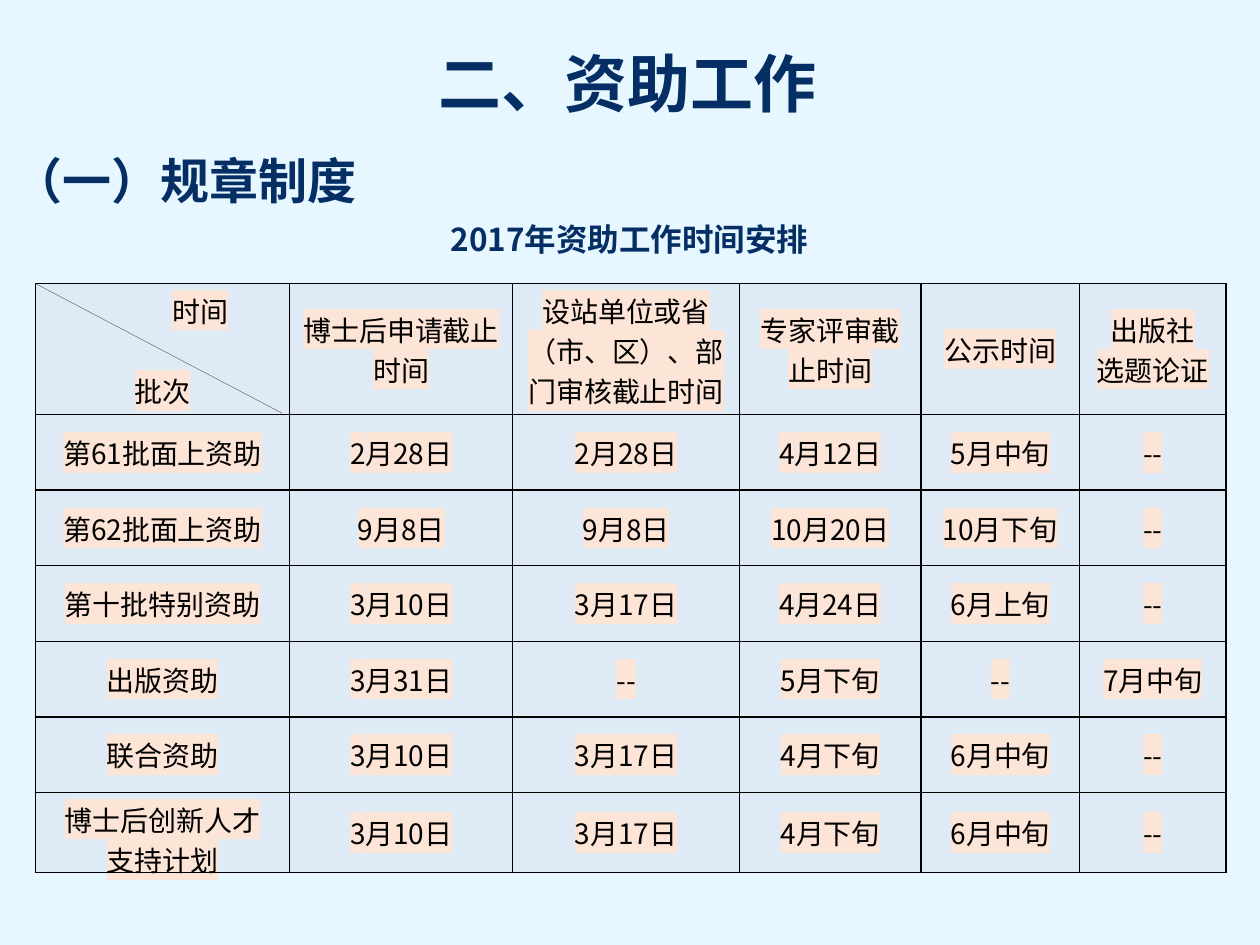
"""Build the slide with the 2017 funding schedule."""
from dataclasses import dataclass

import pptx
import pptx.dml.color
import pptx.enum.shapes
import pptx.enum.text
import pptx.oxml
import pptx.oxml.ns
import pptx.util
from pptx.util import Inches

FONT = "Noto Sans CJK SC"
NAVY, BLACK, GRAY = "052E65", "000000", "5F5F5F"
SKY, CELL_BLUE, PEACH = "E6F7FF", "DEEBF7", "FCE4D6"
CENTER = pptx.enum.text.PP_ALIGN.CENTER
LEFT = pptx.enum.text.PP_ALIGN.LEFT
NONE = "--"

COLUMN_WIDTHS = [2.02, 1.77, 1.8, 1.44, 1.26, 1.16]
ROW_HEIGHTS = [1.04] + [0.6] * 6
SCHEDULE = [
    ["时间\n批次", "博士后申请截止时间", "设站单位或省（市、区）、部门审核截止时间",
     "专家评审截止时间", "公示时间", "出版社\n选题论证"],
    ["第61批面上资助", "2月28日", "2月28日", "4月12日", "5月中旬", NONE],
    ["第62批面上资助", "9月8日", "9月8日", "10月20日", "10月下旬", NONE],
    ["第十批特别资助", "3月10日", "3月17日", "4月24日", "6月上旬", NONE],
    ["出版资助", "3月31日", NONE, "5月下旬", NONE, "7月中旬"],
    ["联合资助", "3月10日", "3月17日", "4月下旬", "6月中旬", NONE],
    ["博士后创新人才\n支持计划", "3月10日", "3月17日", "4月下旬", "6月中旬", NONE],
]


@dataclass(frozen=True)
class Heading:
    """A line of heading text with its place and size."""
    text: str
    left: float
    top: float
    width: float
    height: float
    size: int
    align: pptx.enum.text.PP_ALIGN = CENTER
    space_before: int = 4


HEADINGS = [
    Heading("二、资助工作", 0.16, 0.37, 9.64, 0.7, 36, space_before=0),
    Heading("2017年资助工作时间安排", 1.02, 1.73, 7.95, 0.43, 18),
    Heading("（一）规章制度", 0.01, 1.2, 7.88, 0.63, 28, LEFT),
]


def rgb(value: str) -> pptx.dml.color.RGBColor:
    """Turn a hex string into a colour."""
    return pptx.dml.color.RGBColor.from_string(value)


def element(xml: str):
    """Parse a drawing element written with the a: prefix."""
    namespace = pptx.oxml.ns.nsdecls("a")
    tag, rest = xml[1:].split(" ", 1)
    return pptx.oxml.parse_xml(f"<{tag} {namespace} {rest}")


def add_run(paragraph, text: str, size: int, color: str,
            bold: bool = False, highlight: str = "") -> None:
    """Add one formatted run to a paragraph."""
    run = paragraph.add_run()
    run.text = text
    run.font.size = pptx.util.Pt(size)
    run.font.bold = bold
    run.font.color.rgb = rgb(color)
    properties = run.font._element
    if highlight:
        properties.append(element(
            f'<a:highlight ><a:srgbClr val="{highlight}"/></a:highlight>'))
    run.font.name = FONT
    properties.append(element(f'<a:ea typeface="{FONT}"/>'))


def add_heading(slide, heading: Heading) -> None:
    """Draw a heading in its own text box."""
    box = slide.shapes.add_textbox(
        Inches(heading.left), Inches(heading.top),
        Inches(heading.width), Inches(heading.height))
    box.text_frame.word_wrap = True
    paragraph = box.text_frame.paragraphs[0]
    paragraph.alignment = heading.align
    paragraph.line_spacing = 0.9
    paragraph.space_before = pptx.util.Pt(heading.space_before)
    add_run(paragraph, heading.text, heading.size, NAVY, bold=True)


def fill_cell(cell, text: str) -> None:
    """Write the cell text and give the cell its fill and borders."""
    cell.vertical_anchor = pptx.enum.text.MSO_ANCHOR.MIDDLE
    cell.margin_left = cell.margin_right = Inches(0.07)
    cell.margin_top = cell.margin_bottom = Inches(0.05)
    cell.fill.solid()
    cell.fill.fore_color.rgb = rgb(CELL_BLUE)
    properties = cell._tc.get_or_add_tcPr()
    for index, side in enumerate(("lnL", "lnR", "lnT", "lnB")):
        properties.insert(index, element(
            f'<a:{side} w="{pptx.util.Pt(1)}"><a:solidFill>'
            f'<a:srgbClr val="{BLACK}"/></a:solidFill></a:{side}>'))
    frame = cell.text_frame
    for index, line in enumerate(text.split("\n")):
        paragraph = frame.add_paragraph() if index else frame.paragraphs[0]
        paragraph.alignment = CENTER
        add_run(paragraph, line, 16, BLACK, highlight=PEACH)


def add_schedule(slide) -> None:
    """Draw the schedule table with its split corner cell."""
    left, top = Inches(0.28), Inches(2.25)
    table = slide.shapes.add_table(
        len(SCHEDULE), len(COLUMN_WIDTHS), left, top,
        Inches(sum(COLUMN_WIDTHS)), Inches(sum(ROW_HEIGHTS))).table
    table.first_row = table.horz_banding = False
    for column, width in zip(table.columns, COLUMN_WIDTHS):
        column.width = Inches(width)
    for row, height, texts in zip(table.rows, ROW_HEIGHTS, SCHEDULE):
        row.height = Inches(height)
        for cell, text in zip(row.cells, texts):
            fill_cell(cell, text)

    time_label, batch_label = table.cell(0, 0).text_frame.paragraphs
    time_label._p.get_or_add_pPr().set("marL", str(Inches(0.6)))
    batch_label.space_before = pptx.util.Pt(23)

    diagonal = slide.shapes.add_connector(
        pptx.enum.shapes.MSO_CONNECTOR.STRAIGHT,
        left, top, Inches(2.24), Inches(3.28))
    diagonal.line.color.rgb = rgb(GRAY)
    diagonal.line.width = pptx.util.Pt(0.25)
    diagonal._element.spPr.append(element("<a:effectLst />"))


def main() -> None:
    """Build and save the presentation."""
    presentation = pptx.Presentation()
    presentation.slide_width = Inches(10)
    presentation.slide_height = Inches(7.5)
    slide = presentation.slides.add_slide(presentation.slide_layouts[6])
    slide.background.fill.solid()
    slide.background.fill.fore_color.rgb = rgb(SKY)
    title, caption, section = HEADINGS
    add_heading(slide, title)
    add_heading(slide, caption)
    add_schedule(slide)
    add_heading(slide, section)
    presentation.save("out.pptx")


if __name__ == "__main__":
    main()
